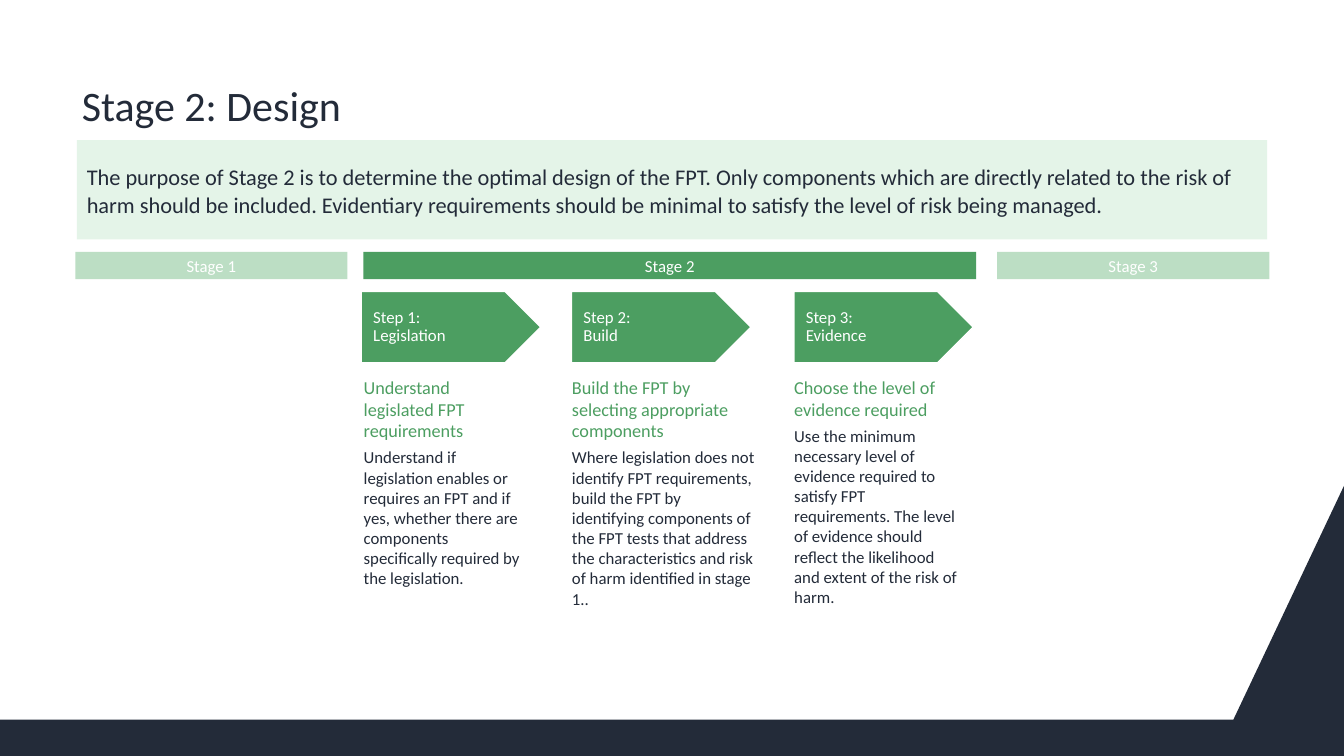
from dataclasses import dataclass

from pptx import Presentation
from pptx.dml.color import RGBColor
from pptx.enum.shapes import MSO_SHAPE
from pptx.enum.text import MSO_ANCHOR, PP_ALIGN
from pptx.shapes.autoshape import Shape
from pptx.slide import Slide
from pptx.text.text import TextFrame
from pptx.util import Pt

FONT = "Calibri"
NAVY = "232B39"
GREEN = "4C9E61"
SOFT_GREEN = "BCDEC4"
PALE_GREEN = "E4F4E8"
WHITE = "FFFFFF"

PAGE_WIDTH, PAGE_HEIGHT = 960, 540
STAGE_TOP, STAGE_HEIGHT = 180, 19.5
ARROW_TOP, ARROW_WIDTH, ARROW_HEIGHT = 208.1, 128.2, 51.1
PANEL_TOP, PANEL_HEIGHT = 260, 224


@dataclass
class Stage:
    label: str
    left: float
    width: float
    fill: str


@dataclass
class Step:
    name: str
    heading: str
    body: str
    arrow_left: float
    panel_left: float
    panel_width: float


STAGES = [
    Stage("Stage 1", 53.8, 194.4, SOFT_GREEN),
    Stage("Stage 2", 259.5, 437.8, GREEN),
    Stage("Stage 3", 712.3, 194.4, SOFT_GREEN),
]

STEPS = [
    Step("Legislation", "Understand legislated FPT requirements",
         "Understand if legislation enables or requires an FPT and if yes, whether "
         "there are components specifically required by the legislation.",
         258, 251.2, 129.6),
    Step("Build", "Build the FPT by selecting appropriate components",
         "Where legislation does not identify FPT requirements, build the FPT by "
         "identifying components of the FPT tests that address the characteristics "
         "and risk of harm identified in stage 1..",
         408.2, 400, 148.3),
    Step("Evidence", "Choose the level of evidence required",
         "Use the minimum necessary level of evidence required to satisfy FPT "
         "requirements. The level of evidence should reflect the likelihood and "
         "extent of the risk of harm.",
         567, 558.7, 136.1),
]


def colour(value: str) -> RGBColor:
    return RGBColor.from_string(value)


def paint(shape: Shape, fill: str, line: str | None = None) -> None:
    shape.shadow.inherit = False
    shape.fill.solid()
    shape.fill.fore_color.rgb = colour(fill)
    if line:
        shape.line.color.rgb = colour(line)
        shape.line.width = Pt(1)
    else:
        shape.line.fill.background()


def add_box(page: Slide, left: float, top: float, width: float, height: float,
            fill: str, kind: MSO_SHAPE = MSO_SHAPE.RECTANGLE,
            line: str | None = None) -> Shape:
    box = page.shapes.add_shape(kind, Pt(left), Pt(top), Pt(width), Pt(height))
    paint(box, fill, line)
    return box


def set_frame(frame: TextFrame, anchor: MSO_ANCHOR, left: float = 7.2,
              top: float = 3.6, right: float = 7.2, bottom: float = 3.6) -> None:
    """Set the anchor and the insets of a wrapped text frame."""
    frame.word_wrap = True
    frame.vertical_anchor = anchor
    frame.margin_left, frame.margin_top = Pt(left), Pt(top)
    frame.margin_right, frame.margin_bottom = Pt(right), Pt(bottom)


def write(frame: TextFrame, text: str, *, size: float, color: str,
          align: PP_ALIGN = PP_ALIGN.LEFT, spacing: float = 1.0,
          before: float = 0, after: float = 0, new: bool = False) -> None:
    """Fill the first paragraph, or a new one; a newline becomes a line break."""
    para = frame.add_paragraph() if new else frame.paragraphs[0]
    para.alignment = align
    para.line_spacing = spacing
    para.space_before, para.space_after = Pt(before), Pt(after)
    for index, line in enumerate(text.split("\n")):
        if index:
            para.add_line_break()
        span = para.add_run()
        span.text = line
        span.font.name = FONT
        span.font.size = Pt(size)
        span.font.color.rgb = colour(color)


def add_footer(page: Slide) -> None:
    outline = page.shapes.build_freeform(0, 514, scale=float(Pt(1)))
    outline.add_line_segments([(881, 514), (PAGE_WIDTH, 347),
                               (PAGE_WIDTH, PAGE_HEIGHT), (0, PAGE_HEIGHT)])
    paint(outline.convert_to_shape(), NAVY)


def add_title(page: Slide, text: str) -> None:
    title = page.shapes.title
    title.left, title.top, title.width, title.height = Pt(55.4), Pt(15.8), Pt(828), Pt(81.4)
    set_frame(title.text_frame, MSO_ANCHOR.BOTTOM, left=3, right=3)
    write(title.text_frame, text, size=30, color=NAVY, spacing=0.9)


def add_purpose(page: Slide, text: str) -> None:
    frame = add_box(page, 54.9, 100, 850.2, 71, PALE_GREEN).text_frame
    set_frame(frame, MSO_ANCHOR.MIDDLE)
    write(frame, text, size=16, color=NAVY, spacing=1.05, before=2, after=2)


def add_stage(page: Slide, stage: Stage) -> None:
    frame = add_box(page, stage.left, STAGE_TOP, stage.width, STAGE_HEIGHT,
                    stage.fill).text_frame
    set_frame(frame, MSO_ANCHOR.MIDDLE)
    write(frame, stage.label, size=12, color=WHITE, align=PP_ALIGN.CENTER)


def add_step(page: Slide, number: int, step: Step) -> None:
    """Draw the explanation panel and, above it, the arrow that names the step."""
    panel = add_box(page, step.panel_left, PANEL_TOP, step.panel_width,
                    PANEL_HEIGHT, WHITE).text_frame
    set_frame(panel, MSO_ANCHOR.TOP, left=8.6, top=8.6, right=8.6, bottom=5.8)
    write(panel, step.heading, size=13, color=GREEN, after=4)
    write(panel, step.body, size=12, color=NAVY, after=4, new=True)

    arrow = add_box(page, step.arrow_left, ARROW_TOP, ARROW_WIDTH, ARROW_HEIGHT,
                    GREEN, MSO_SHAPE.PENTAGON, WHITE).text_frame
    set_frame(arrow, MSO_ANCHOR.MIDDLE, left=8.6, top=1.4, right=8.6, bottom=1.4)
    write(arrow, f"Step {number}:\n{step.name}", size=12, color=WHITE, spacing=0.9)


def main() -> None:
    deck = Presentation()
    deck.slide_width, deck.slide_height = Pt(PAGE_WIDTH), Pt(PAGE_HEIGHT)
    page = deck.slides.add_slide(deck.slide_layouts[5])
    add_footer(page)
    add_title(page, "Stage 2: Design")
    add_purpose(page, "The purpose of Stage 2 is to determine the optimal design of the "
                      "FPT. Only components which are directly related to the risk of harm "
                      "should be included. Evidentiary requirements should be minimal to "
                      "satisfy the level of risk being managed.")
    for stage in STAGES:
        add_stage(page, stage)
    for number, step in enumerate(STEPS, start=1):
        add_step(page, number, step)
    deck.save("out.pptx")


if __name__ == "__main__":
    main()
